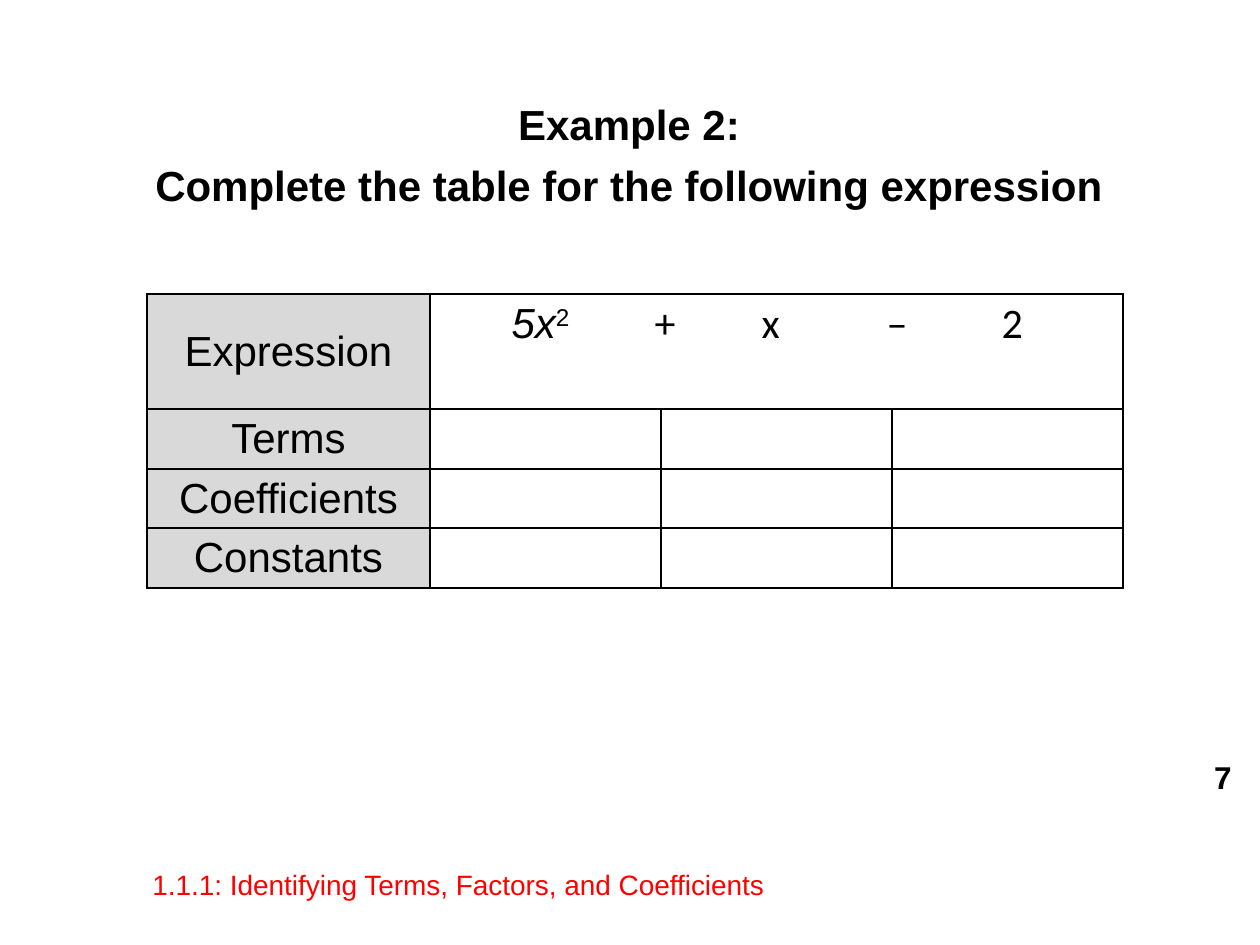
from dataclasses import dataclass
from lxml import etree
from pptx import Presentation, util as u
from pptx.dml.color import RGBColor
from pptx.enum import text as t
from pptx.oxml.ns import qn

# Content
TITLE = ["Example 2:", "Complete the table for the following expression"]
HEAD = "Expression"
LABELS = ["Terms", "Coefficients", "Constants"]
# Each run: text, font, italic, superscript
TERMS = [
    ("\t5x", "Arial", True, False),
    ("2", "Arial", False, True),
    ("\t+\tx\t–\t2", "Calibri", False, False),
]
TABS = [69, 212, 319, 444, 559]
PAGE = "7"
FOOT = "1.1.1: Identifying Terms, Factors, and Coefficients"


@dataclass
class Theme:
    font: str = "Arial"
    ink: str = "000000"
    red: str = "FF0000"
    gray: str = "D9D9D9"
    white: str = "FFFFFF"
    big: int = 24
    mid: int = 18
    small: int = 16


THEME = Theme()
A = t.PP_ALIGN
V = t.MSO_ANCHOR


def px(n):
    return u.Emu(n * 914400 // 126)


def add_run(para, words, size, color=THEME.ink, font=THEME.font, bold=False):
    run = para.add_run()
    run.text = words
    run.font.size = u.Pt(size)
    run.font.name = font
    run.font.bold = bold
    run.font.color.rgb = RGBColor.from_string(color)
    return run


def place(shape, box, anchor):
    shape.left, shape.top, shape.width, shape.height = map(px, box)
    frame = shape.text_frame
    frame.word_wrap = True
    frame.auto_size = t.MSO_AUTO_SIZE.NONE
    frame.vertical_anchor = anchor
    return frame


def add_text(slide, box, words, anchor, align, **style):
    frame = place(slide.shapes.add_textbox(0, 0, 0, 0), box, anchor)
    para = frame.paragraphs[0]
    para.alignment = align
    add_run(para, words, **style)


def style_cell(cell, fill):
    cell.margin_top = cell.margin_bottom = px(5)
    cell.vertical_anchor = V.MIDDLE
    props = cell._tc.get_or_add_tcPr()
    for side in ("lnL", "lnR", "lnT", "lnB"):
        line = etree.SubElement(props, qn("a:" + side), w=str(u.Pt(1)))
        solid = etree.SubElement(line, qn("a:solidFill"))
        etree.SubElement(solid, qn("a:srgbClr"), val=THEME.ink)
    cell.fill.solid()
    cell.fill.fore_color.rgb = RGBColor.from_string(fill)


def add_grid(slide):
    cols, rows = [283, 231, 231, 231], [115, 60, 59, 60]
    frame = slide.shapes.add_table(
        len(rows), len(cols), px(147), px(294), px(sum(cols)), px(sum(rows)))
    table = frame.table
    for col, wide in zip(table.columns, cols):
        col.width = px(wide)
    for row, tall in zip(table.rows, rows):
        row.height = px(tall)
        for i, cell in enumerate(row.cells):
            style_cell(cell, THEME.white if i else THEME.gray)

    # Row labels
    for i, label in enumerate([HEAD] + LABELS):
        para = table.cell(i, 0).text_frame.paragraphs[0]
        para.alignment = A.CENTER
        add_run(para, label, THEME.big)

    # Expression, spaced by tab stops over the merged cells
    cell = table.cell(0, 1)
    cell.merge(table.cell(0, 3))
    cell.vertical_anchor = V.TOP
    para = cell.text_frame.paragraphs[0]
    stops = etree.SubElement(para._p.get_or_add_pPr(), qn("a:tabLst"))
    for stop in TABS:
        etree.SubElement(stops, qn("a:tab"), pos=str(px(stop)), algn="l")
    for words, font, slant, power in TERMS:
        run = add_run(para, words, THEME.big, font=font)
        run.font.italic = slant
        if power:
            run._r.get_or_add_rPr().set("baseline", "30000")


def main():
    deck = Presentation()
    deck.slide_width, deck.slide_height = px(1260), px(945)
    slide = deck.slides.add_slide(deck.slide_layouts[5])

    # Title
    frame = place(slide.shapes.title, (88, 92, 1082, 130), V.TOP)
    for i, words in enumerate(TITLE):
        para = frame.add_paragraph() if i else frame.paragraphs[0]
        para.alignment = A.CENTER
        if i:
            para.space_before = u.Pt(6)
        add_run(para, words, THEME.big, bold=True)

    add_grid(slide)

    # Page number and footer
    add_text(slide, (1143, 757, 101, 39), PAGE, V.MIDDLE, A.RIGHT,
             size=THEME.mid, bold=True)
    add_text(slide, (140, 861, 762, 37), FOOT, V.TOP, A.LEFT,
             size=THEME.small, color=THEME.red)
    deck.save("out.pptx")


if __name__ == "__main__":
    main()
